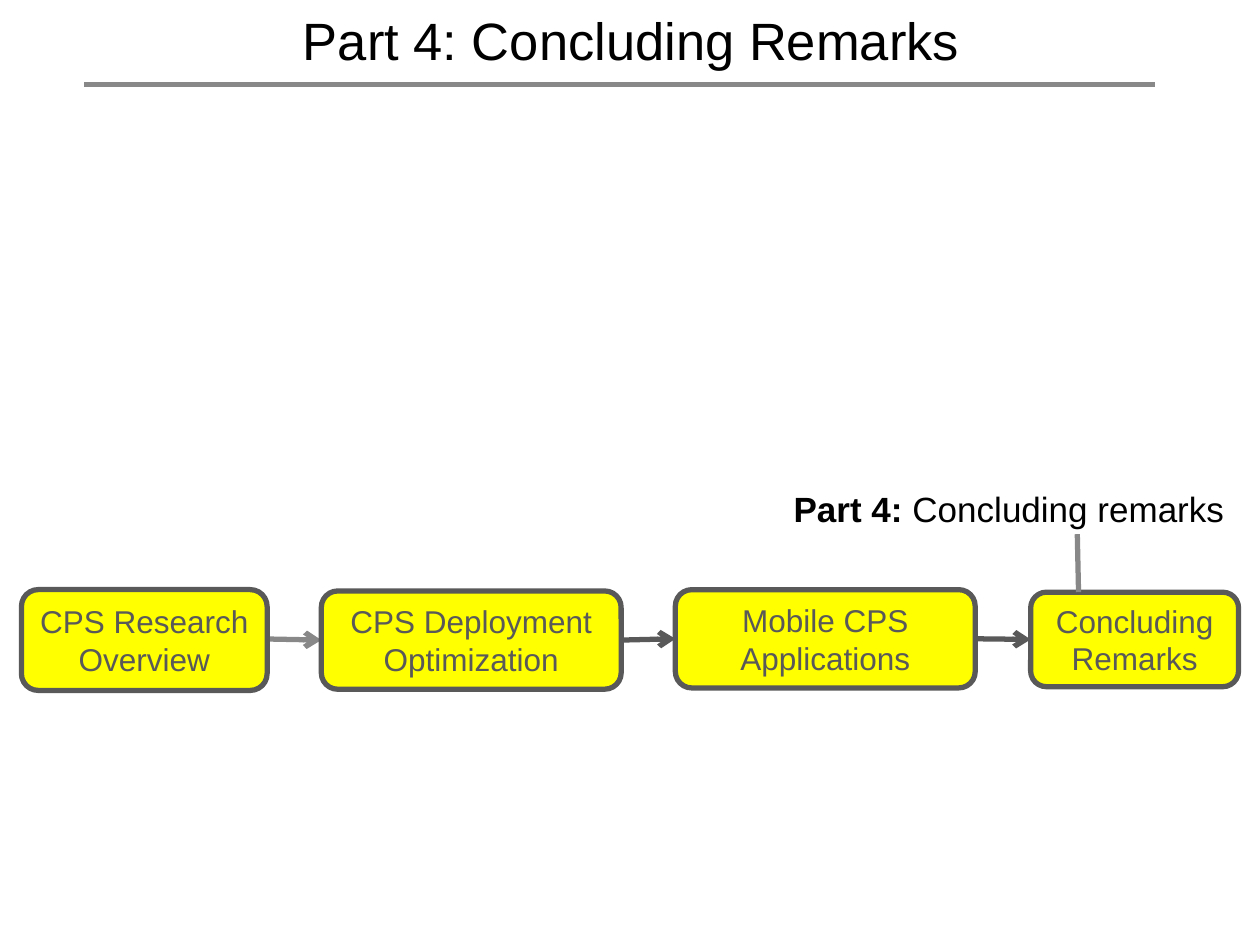
import dataclasses
import pptx
import pptx.util
import pptx.dml.color
import pptx.enum.shapes
import pptx.enum.text
import pptx.oxml
import pptx.oxml.ns
import lxml.etree

Inches = pptx.util.Inches
Pt = pptx.util.Pt
Align = pptx.enum.text.PP_ALIGN
Anchor = pptx.enum.text.MSO_ANCHOR
Fit = pptx.enum.text.MSO_AUTO_SIZE


@dataclasses.dataclass(frozen=True)
class Theme:
    font: str = "Arial"
    ink: str = "000000"
    dark: str = "595959"
    grey: str = "888888"
    fill: str = "FFFF00"
    head: int = 30
    note: int = 20
    step: int = 18
    line: int = 3


class Deck:
    def __init__(self, theme, slide):
        self.theme = theme
        self.slide = slide

    def tint(self, code):
        return pptx.dml.color.RGBColor.from_string(code)

    def add_text(self, para, text, size, color, bold=False):
        run = para.add_run()
        run.text = text
        run.font.name = self.theme.font
        run.font.size = Pt(size)
        run.font.bold = bold
        run.font.color.rgb = self.tint(color)

    def title(self, text, left, top, width, height):
        shape = self.slide.shapes.title
        shape.left, shape.top = Inches(left), Inches(top)
        shape.width, shape.height = Inches(width), Inches(height)
        frame = shape.text_frame
        frame.word_wrap = False
        frame.auto_size = Fit.SHAPE_TO_FIT_TEXT
        frame.vertical_anchor = Anchor.MIDDLE
        para = frame.paragraphs[0]
        para.alignment = Align.CENTER
        self.add_text(para, text, self.theme.head, self.theme.ink)

    def label(self, parts, left, top, width, height):
        shape = self.slide.shapes.add_textbox(
            Inches(left), Inches(top), Inches(width), Inches(height))
        frame = shape.text_frame
        frame.word_wrap = True
        frame.auto_size = Fit.SHAPE_TO_FIT_TEXT
        for text, bold in parts:
            self.add_text(frame.paragraphs[0], text, self.theme.note,
                          self.theme.ink, bold)

    def box(self, text, left, top, width, height):
        shape = self.slide.shapes.add_shape(
            pptx.enum.shapes.MSO_SHAPE.ROUNDED_RECTANGLE,
            Inches(left), Inches(top), Inches(width), Inches(height))
        shape.shadow.inherit = False
        shape.fill.solid()
        shape.fill.fore_color.rgb = self.tint(self.theme.fill)
        shape.line.color.rgb = self.tint(self.theme.dark)
        shape.line.width = Pt(self.theme.line)
        frame = shape.text_frame
        frame.word_wrap = True
        frame.vertical_anchor = Anchor.MIDDLE
        para = frame.paragraphs[0]
        para.alignment = Align.CENTER
        self.add_text(para, text, self.theme.step, self.theme.dark)
        return shape

    def rule(self, start, end, color, arrow=False):
        line = self.slide.shapes.add_connector(
            pptx.enum.shapes.MSO_CONNECTOR.STRAIGHT,
            *(Inches(n) for n in (*start, *end)))
        line.line.color.rgb = self.tint(color)
        line.line.width = Pt(self.theme.line)
        qn = pptx.oxml.ns.qn
        props = line._element.spPr
        if arrow:
            lxml.etree.SubElement(
                props.find(qn("a:ln")), qn("a:tailEnd"), type="arrow")
        lxml.etree.SubElement(props, qn("a:effectLst"))
        return line

    def link(self, first, last):
        line = self.rule((0, 0), (1, 1), self.theme.dark, True)
        line.begin_connect(first, 3)
        line.end_connect(last, 1)


def main():
    show = pptx.Presentation()
    show.slide_width, show.slide_height = Inches(10), Inches(7.5)
    theme = Theme()
    deck = Deck(theme, show.slides.add_slide(show.slide_layouts[5]))

    deck.title("Part 4: Concluding Remarks", 2.28, 0.01, 5.46, 0.61)
    deck.rule((0.67, 0.67), (9.17, 0.67), theme.grey)

    entry = deck.rule((1.53, 5.06), (2.55, 5.07), theme.grey, True)
    deploy = deck.box("CPS Deployment Optimization", 2.55, 4.69, 2.38, 0.78)
    entry.end_connect(deploy, 1)
    close = deck.box("Concluding Remarks", 8.18, 4.7, 1.65, 0.75)
    deck.box("CPS Research Overview", 0.17, 4.68, 1.95, 0.8)
    mobile = deck.box("Mobile CPS Applications", 5.36, 4.68, 2.38, 0.78)
    for first, last in ((deploy, mobile), (mobile, close)):
        deck.link(first, last)

    deck.rule((8.55, 4.24), (8.56, 4.7), theme.grey)
    deck.label((("Part 4: ", True), ("Concluding remarks", False)),
               6.2, 3.82, 3.8, 0.44)
    show.save("out.pptx")


if __name__ == "__main__":
    main()
